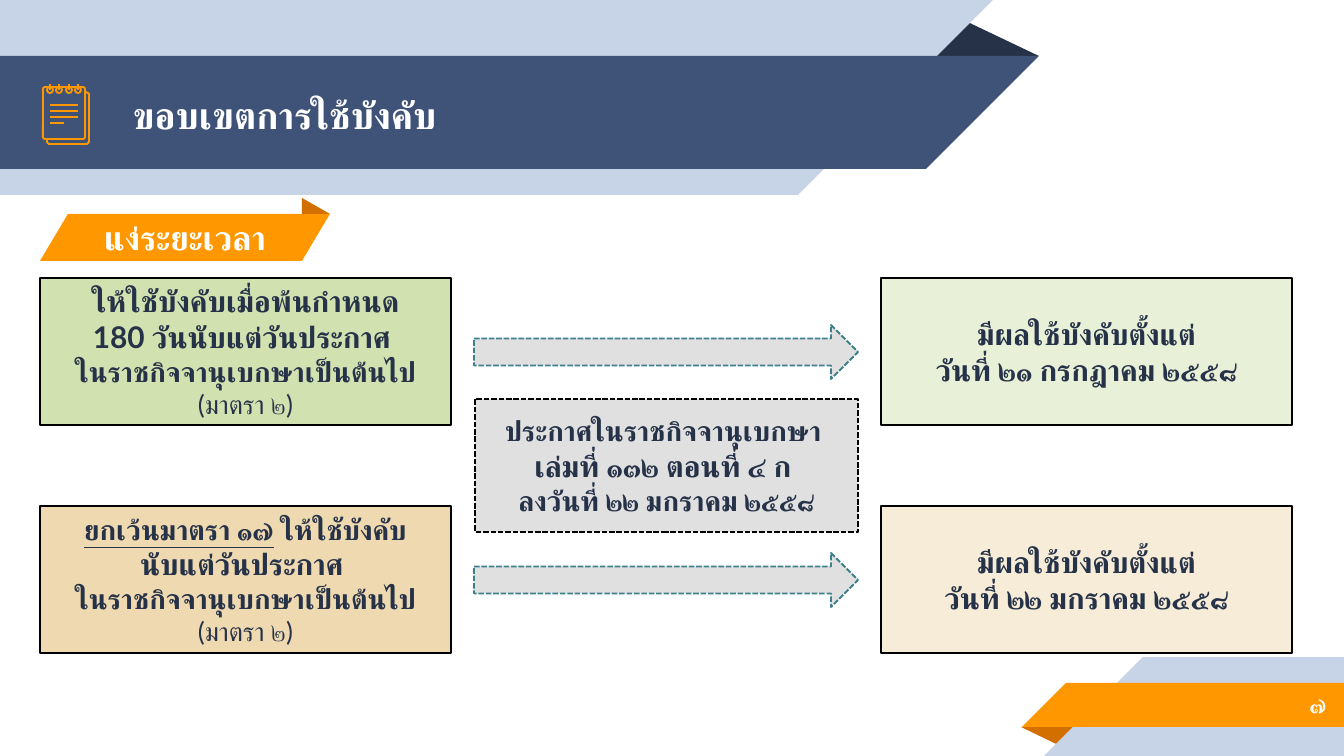
from lxml.etree import SubElement
from pptx import Presentation
from pptx.dml.color import RGBColor
from pptx.enum.dml import MSO_LINE
from pptx.enum.shapes import MSO_CONNECTOR, MSO_SHAPE
from pptx.enum.text import MSO_ANCHOR, PP_ALIGN
from pptx.oxml.ns import qn
from pptx.util import Pt

PX = 914400 / 134.4
FONT = "Lato"
WHITE = RGBColor(0xFF, 0xFF, 0xFF)
BLACK = RGBColor(0x00, 0x00, 0x00)
INK = RGBColor(0x26, 0x32, 0x48)
NAVY = RGBColor(0x3F, 0x53, 0x78)
PALE_BLUE = RGBColor(0xC7, 0xD3, 0xE6)
ORANGE = RGBColor(0xFF, 0x98, 0x00)
DARK_ORANGE = RGBColor(0xD2, 0x6F, 0x00)
GREEN = RGBColor(0xD2, 0xE1, 0xB0)
PALE_GREEN = RGBColor(0xE8, 0xF0, 0xD8)
SAND = RGBColor(0xEF, 0xD9, 0xB0)
PALE_SAND = RGBColor(0xF7, 0xEC, 0xD7)
GREY = RGBColor(0xE0, 0xE0, 0xE0)
TEAL = RGBColor(0x3D, 0x80, 0x8C)

RECT = MSO_SHAPE.RECTANGLE
CORNER = MSO_SHAPE.RIGHT_TRIANGLE
FOLD = MSO_SHAPE.ISOSCELES_TRIANGLE
BOX_WIDTH, BOX_HEIGHT = 411, 147
LEFT, MIDDLE, RIGHT = 40, 474, 881


def px(*lengths):
    """Turn pixel lengths into whole EMU."""
    return [round(length * PX) for length in lengths]


def style_line(line, color, width=1, dash=None):
    """Give a line its colour, width and dash."""
    line.color.rgb = color
    line.width = Pt(width)
    if dash:
        line.dash_style = dash


def add_shape(page, kind, area, fill=None, line=None, dash=None, flip=None, peak=None):
    """Add a preset shape without shadow."""
    shape = page.shapes.add_shape(kind, *px(*area))
    shape.shadow.inherit = False
    if fill is None:
        shape.fill.background()
    else:
        shape.fill.solid()
        shape.fill.fore_color.rgb = fill
    if line is None:
        shape.line.fill.background()
    else:
        style_line(shape.line, line, dash=dash)
    if flip:
        shape._element.spPr.find(qn("a:xfrm")).set(flip, "1")
    if peak is not None:
        shape.adjustments[0] = peak
    return shape


def write(shape, paragraphs, color=INK, align=PP_ALIGN.CENTER):
    """Fill a shape with paragraphs, each a list of (text, format) spans."""
    frame = shape.text_frame
    frame.word_wrap = True
    frame.vertical_anchor = MSO_ANCHOR.MIDDLE
    for side in ("left", "right", "top", "bottom"):
        setattr(frame, f"margin_{side}", px(13)[0])
    for number, spans in enumerate(paragraphs):
        para = frame.add_paragraph() if number else frame.paragraphs[0]
        para.alignment = align
        for text, changes in spans:
            span = para.add_run()
            span.text = text
            span.font.color.rgb = color
            for name, value in {"name": FONT, "bold": True, **changes}.items():
                setattr(span.font, name, value)
            for script in ("a:ea", "a:cs"):
                SubElement(span._r.rPr, qn(script)).set("typeface", FONT)


def row(text, size, **changes):
    """Describe a paragraph with a single span."""
    return [(text, {"size": Pt(size), **changes})]


def add_text(page, area, paragraphs, align):
    """Add a white text box."""
    write(page.shapes.add_textbox(*px(*area)), paragraphs, WHITE, align)


def add_stroke(page, *ends):
    """Add a thin orange line of the notepad."""
    stroke = page.shapes.add_connector(MSO_CONNECTOR.STRAIGHT, *px(*ends))
    style_line(stroke.line, ORANGE)
    SubElement(stroke._element.spPr, qn("a:effectLst"))


def add_bands(page):
    """Draw the header and footer ribbons."""
    add_shape(page, FOLD, (925, 19, 114, 37), INK, peak=0.32)
    for top, width, height, color in ((0, 798, 195, PALE_BLUE), (56, 926, 113, NAVY)):
        add_shape(page, RECT, (0, top, width, height), color)
        add_shape(page, CORNER, (width, top, height, height), color, flip="flipV")
    add_shape(page, FOLD, (1021, 727, 58, 19), DARK_ORANGE, peak=0.32).rotation = 180
    for left, top, size, color in ((1143, 657, 99, PALE_BLUE), (1066, 683, 44, ORANGE)):
        add_shape(page, RECT, (left, top, 1344 - left, size), color)
        add_shape(page, CORNER, (left - size, top, size, size), color, flip="flipH")


def add_notepad(page):
    """Draw the notepad icon."""
    builder = page.shapes.build_freeform(47, 140, scale=PX)
    builder.add_line_segments(
        [(47, 142), (49, 144), (87, 144), (89, 142), (89, 94), (88, 93), (86, 92)], close=False
    )
    back = builder.convert_to_shape()
    back.shadow.inherit = False
    back.fill.background()
    style_line(back.line, ORANGE)
    front = add_shape(page, MSO_SHAPE.ROUNDED_RECTANGLE, (43, 87, 42, 52), line=ORANGE)
    front.adjustments[0] = 0.05
    for ring in range(4):
        left = 47 + ring * 19 // 2
        add_shape(page, MSO_SHAPE.OVAL, (left, 87, 6, 6), line=ORANGE)
        add_stroke(page, left + 3, 84, left + 3, 90)
    for number, end in enumerate((78, 78, 78, 64)):
        add_stroke(page, 50, 105 + 6 * number, end, 105 + 6 * number)


def add_section_tag(page):
    """Draw the orange tag that names the section."""
    add_shape(page, CORNER, (40, 214, 28, 47), ORANGE, flip="flipH")
    tag = add_shape(page, RECT, (68, 214, 234, 47), ORANGE)
    write(tag, [row("แง่ระยะเวลา", 18)], WHITE)
    add_shape(page, CORNER, (302, 214, 28, 47), ORANGE, flip="flipV")
    add_shape(page, FOLD, (302, 198, 28, 16), DARK_ORANGE, peak=0)


def add_rule(page, top, condition, condition_fill, date, date_fill):
    """Draw a condition, an arrow and the date it leads to."""
    gazette = [row("ในราชกิจจานุเบกษาเป็นต้นไป", 15), row("(มาตรา ๒)", 14, bold=False)]
    effect = [row("มีผลใช้บังคับตั้งแต่", 16), row(date, 16)]
    for left, fill, paragraphs in (
        (LEFT, condition_fill, condition + gazette),
        (RIGHT, date_fill, effect),
    ):
        box = add_shape(page, RECT, (left, top, BOX_WIDTH, BOX_HEIGHT), fill, BLACK)
        write(box, paragraphs)
    arrow_area = (MIDDLE, top + 47, 384, 54)
    add_shape(page, MSO_SHAPE.RIGHT_ARROW, arrow_area, GREY, TEAL, MSO_LINE.SQUARE_DOT)


def main():
    """Build the slide and save it."""
    deck = Presentation()
    deck.slide_width, deck.slide_height = px(1344, 756)
    page = deck.slides.add_slide(deck.slide_layouts[6])
    add_bands(page)
    add_text(page, (120, 58, 821, 113), [row("ขอบเขตการใช้บังคับ", 20)], PP_ALIGN.LEFT)
    add_text(page, (1120, 681, 219, 47), [row("๗", 12)], PP_ALIGN.RIGHT)
    add_notepad(page)
    add_section_tag(page)
    general = [row("ให้ใชับังคับเมื่อพ้นกําหนด", 16), row("180 วันนับแต่วันประกาศ ", 16)]
    exception = [
        row("ยกเว้นมาตรา ๑๗", 15, underline=True) + row(" ให้ใชับังคับ", 15),
        row("นับแต่วันประกาศ ", 16),
    ]
    add_rule(page, 278, general, GREEN, "วันที่ ๒๑ กรกฎาคม ๒๕๕๘", PALE_GREEN)
    notice = add_shape(page, RECT, (475, 399, 383, 133), GREY, BLACK, MSO_LINE.SQUARE_DOT)
    write(notice, [
        row("ประกาศในราชกิจจานุเบกษา ", 15),
        row("เล่มที่ ๑๓๒ ตอนที่ ๔ ก ", 16),
        row("ลงวันที่ ๒๒ มกราคม ๒๕๕๘", 15),
    ])
    add_rule(page, 506, exception, SAND, "วันที่ ๒๒ มกราคม ๒๕๕๘", PALE_SAND)
    deck.save("out.pptx")


if __name__ == "__main__":
    main()
